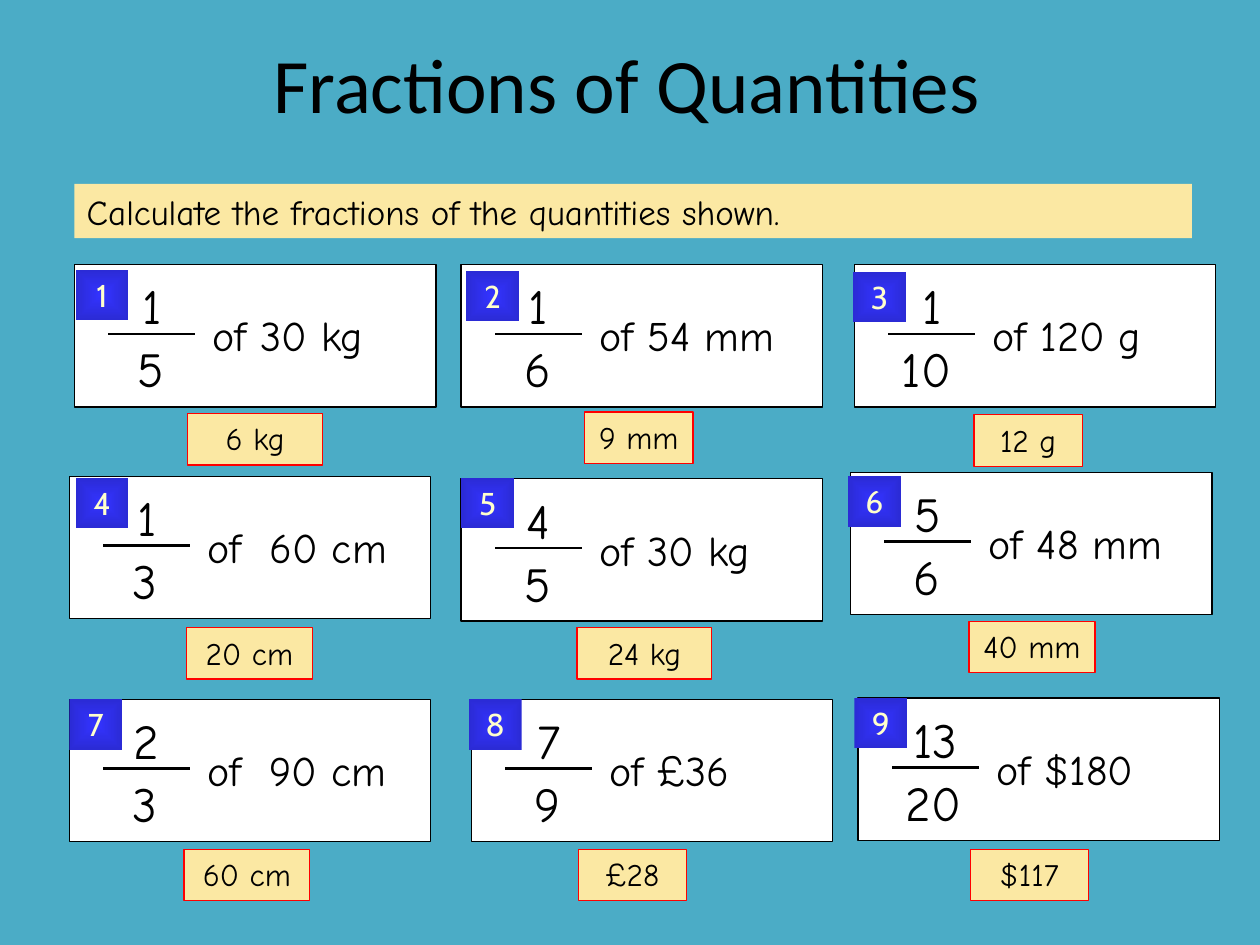
"""Build a worksheet slide of nine fraction questions with their answers."""
import pptx
import pptx.dml.color
import pptx.enum.shapes
import pptx.enum.text
import pptx.oxml
import pptx.oxml.ns
import pptx.util

COLORS = {
    "background": "4BACC6",
    "ink": "000000",
    "card": "FFFFFF",
    "panel": "FBE8A3",
    "answer line": "FF0000",
    "badge centre": "3333FF",
    "badge edge": "2B2BD5",
    "badge text": "FFFFCC",
}
COLUMNS, ROWS = 100, 75
CARD_SIZE = (28.7, 11.3)
BADGE_SIZE = (4.2, 4)
ANSWER_HEIGHT = 4.1

QUESTIONS = [
    ("1", "5", "of 30 kg", "6 kg", (5.9, 21), (6, 21.4), (14.9, 32.8), 10.7),
    ("1", "6", "of 54 mm", "9 mm", (36.6, 21), (37, 21.5), (46.4, 32.7), 8.6),
    ("1", "10", "of 120 g", "12 g", (67.8, 21), (67.7, 21.6), (77.3, 32.9), 8.6),
    ("1", "3", "of  60 cm", "20 cm", (5.5, 37.8), (6, 37.9), (14.8, 49.8), 10),
    ("4", "5", "of 30 kg", "24 kg", (36.6, 38), (36.6, 37.9), (45.8, 49.8), 10.7),
    ("5", "6", "of 48 mm", "40 mm", (67.5, 37.5), (67.3, 37.8), (76.9, 49.3), 10),
    ("2", "3", "of  90 cm", "60 cm", (5.5, 55.5), (5.5, 55.5), (14.6, 67.4), 10),
    ("7", "9", "of £36", "£28", (37.4, 55.5), (37.2, 55.5), (45.9, 67.4), 8.6),
    ("13", "20", "of $180", "$117", (68.1, 55.4), (67.8, 55.4), (77, 67.4), 9.4),
]


class Worksheet:
    """Holds the style, the grid and the current slide."""

    font = "Comic Neue"

    def __init__(self, presentation):
        self.column = presentation.slide_width / COLUMNS
        self.row = presentation.slide_height / ROWS
        self.slide = presentation.slides.add_slide(presentation.slide_layouts[6])
        self.paint(self.slide.background.fill, "background")

    def color(self, name):
        return pptx.dml.color.RGBColor.from_string(COLORS[name])

    def paint(self, fill, name):
        fill.solid()
        fill.fore_color.rgb = self.color(name)

    def place(self, left, top, width, height):
        horizontal, vertical = self.column, self.row
        return (round(left * horizontal), round(top * vertical),
                round(width * horizontal), round(height * vertical))

    def set_text(self, shape, text, size, font=None, color="ink", centred=False, inset=1):
        frame = shape.text_frame
        frame.word_wrap = True
        frame.auto_size = pptx.enum.text.MSO_AUTO_SIZE.NONE
        frame.vertical_anchor = pptx.enum.text.MSO_ANCHOR.TOP
        frame.margin_left = round(inset * self.column)
        if centred:
            frame.margin_right = frame.margin_left
        paragraph = frame.paragraphs[0]
        paragraph.text = text
        alignment = pptx.enum.text.PP_ALIGN
        paragraph.alignment = alignment.CENTER if centred else alignment.LEFT
        paragraph.font.size = pptx.util.Pt(size)
        paragraph.font.name = font or self.font
        paragraph.font.color.rgb = self.color(color)

    def text(self, shapes, box, text, size, **style):
        self.set_text(shapes.add_textbox(*self.place(*box)), text, size, **style)

    def rectangle(self, shapes, box, fill, line=None):
        kind = pptx.enum.shapes.MSO_SHAPE.RECTANGLE
        shape = shapes.add_shape(kind, *self.place(*box))
        shape.shadow.inherit = False
        self.paint(shape.fill, fill)
        if line:
            shape.line.color.rgb = self.color(line)
            shape.line.width = pptx.util.Pt(0.75)
        else:
            shape.line.fill.background()
        return shape

    def bar(self, shapes, left, top, width):
        x, y, length, _ = self.place(left, top, width, 0)
        kind = pptx.enum.shapes.MSO_CONNECTOR.STRAIGHT
        connector = shapes.add_connector(kind, x, y, x + length, y)
        connector.line.color.rgb = self.color("ink")
        connector.line.width = pptx.util.Pt(1.5)
        properties = connector._element.spPr
        properties.append(pptx.oxml.parse_xml(
            f"<a:effectLst {pptx.oxml.ns.nsdecls('a')}/>"))

    def card(self, corner, numerator, denominator, quantity):
        left, top = corner
        shapes = self.slide.shapes.add_group_shape().shapes
        self.rectangle(shapes, (left, top, *CARD_SIZE), "card", "ink")
        self.text(shapes, (left + 1.6, top + 0.4, 9.1, 5.7), numerator, 28, centred=True)
        inset = 2.2 if len(denominator) == 1 else 1
        self.text(shapes, (left + 2.8, top + 5.4, 8.8, 5.7), denominator, 28, inset=inset)
        self.bar(shapes, left + 2.7, top + 5.5, 6.9)
        self.text(shapes, (left + 10, top + 3.1, 18.2, 5), quantity, 24)

    def badge(self, corner, number):
        shape = self.rectangle(self.slide.shapes, (*corner, *BADGE_SIZE), "badge edge")
        shape.fill.gradient()
        for stop, name in zip(shape.fill.gradient_stops, ("badge centre", "badge edge")):
            stop.color.rgb = self.color(name)
        direction = shape._element.spPr.find(".//" + pptx.oxml.ns.qn("a:lin"))
        direction.getparent().replace(direction, pptx.oxml.parse_xml(
            f'<a:path {pptx.oxml.ns.nsdecls("a")} path="shape">'
            '<a:fillToRect l="50000" t="50000" r="50000" b="50000"/></a:path>'))
        self.set_text(shape, number, 18, font="Cabin", color="badge text", centred=True)

    def answer(self, corner, width, text):
        box = (*corner, width, ANSWER_HEIGHT)
        shape = self.rectangle(self.slide.shapes, box, "panel", "answer line")
        self.set_text(shape, text, 18, centred=True, inset=0.5)

    def title(self, text):
        self.text(self.slide.shapes, (15.4, 2.4, 68.7, 8.4), text, 44,
                  font="Calibri", centred=True)

    def instruction(self, text):
        shape = self.rectangle(self.slide.shapes, (5.9, 14.6, 88.7, 4.3), "panel")
        self.set_text(shape, text, 20)


def main():
    presentation = pptx.Presentation()
    presentation.slide_width = pptx.util.Inches(10)
    presentation.slide_height = pptx.util.Inches(7.5)
    worksheet = Worksheet(presentation)
    worksheet.title("Fractions of Quantities")
    worksheet.instruction("Calculate the fractions of the quantities shown.")
    for number, question in enumerate(QUESTIONS, 1):
        numerator, denominator, quantity, answer, card, badge, place, width = question
        worksheet.card(card, numerator, denominator, quantity)
        worksheet.badge(badge, str(number))
        worksheet.answer(place, width, answer)
    presentation.save("out.pptx")


if __name__ == "__main__":
    main()
